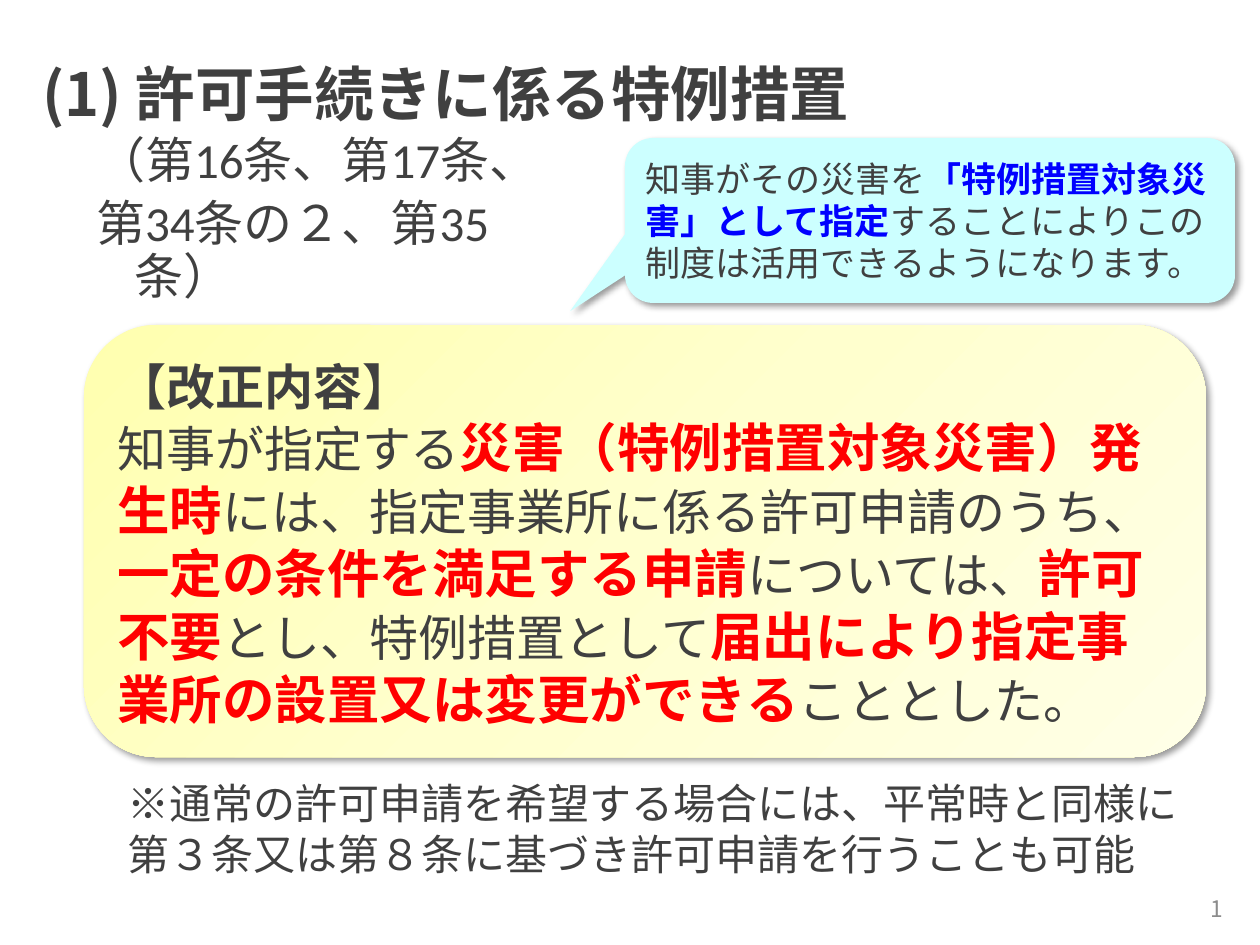
from lxml.etree import SubElement
from pptx import Presentation
from pptx.dml.color import RGBColor
from pptx.enum.shapes import MSO_SHAPE as Preset
from pptx.enum.text import MSO_ANCHOR as Anchor, PP_ALIGN as Align
from pptx.oxml.ns import qn
from pptx.util import Emu, Pt

PX = 914400 / 126
GOTHIC = "Noto Sans CJK JP"
GREY, RED, BLUE = "404040", "FF0000", "0000FF"


def px(length):
    return Emu(round(length * PX))


def rgb(value):
    return RGBColor.from_string(value)


def add_color(parent, value):
    return SubElement(parent, qn("a:srgbClr"), val=value)


class SlideBuilder:
    def __init__(self, slide, font=GOTHIC, color=GREY):
        self.slide, self.font, self.color = slide, font, color

    def fill_text(self, shape, paragraphs, size, anchor=Anchor.TOP, hanging=0, latin=None,
                  run_format=None, **paragraph_format):
        """Fill a shape; each paragraph is a list of (text, run format) pairs."""
        frame = shape.text_frame
        frame.word_wrap = True
        frame.vertical_anchor = anchor
        for index, runs in enumerate(paragraphs):
            paragraph = frame.add_paragraph() if index else frame.paragraphs[0]
            layout = {"alignment": Align.LEFT, **paragraph_format}
            if index == 0:
                layout.pop("space_before", None)
            for name, value in layout.items():
                setattr(paragraph, name, value)
            if hanging:
                properties = paragraph._p.get_or_add_pPr()
                properties.set("marL", str(px(hanging)))
                properties.set("indent", str(-px(hanging)))
            for text, changes in runs:
                self.add_run(paragraph, text, {"size": size, "name": latin or self.font,
                                               **(run_format or {}), **changes})

    def add_run(self, paragraph, text, changes):
        run = paragraph.add_run()
        run.text = text
        values = {"bold": False, **changes}
        run.font.color.rgb = rgb(values.pop("color", self.color))
        values["size"] = Pt(values["size"])
        for name, value in values.items():
            setattr(run.font, name, value)
        SubElement(run._r.get_or_add_rPr(), qn("a:ea"), typeface=self.font)

    def text(self, box, paragraphs, size, **options):
        self.fill_text(self.slide.shapes.add_textbox(*map(px, box)), paragraphs, size,
                       **options)

    def panel(self, preset, box, fills, paragraphs, size, adjustments=(), **options):
        """Draw a shadowed shape with one solid colour or evenly spaced gradient colours."""
        shape = self.slide.shapes.add_shape(preset, *map(px, box))
        for index, value in enumerate(adjustments):
            shape.adjustments[index] = value
        shape.line.fill.background()
        if len(fills) == 1:
            shape.fill.solid()
            shape.fill.fore_color.rgb = rgb(fills[0])
        else:
            self.set_gradient(shape, fills)
        self.add_shadow(shape)
        self.fill_text(shape, paragraphs, size, **options)

    def set_gradient(self, shape, colors):
        shape.fill.gradient()
        shape.fill.gradient_angle = 315
        stops = shape._element.spPr.find(".//" + qn("a:gsLst"))
        for stop in list(stops):
            stops.remove(stop)
        for index, color in enumerate(colors):
            position = 100000 * index // (len(colors) - 1)
            add_color(SubElement(stops, qn("a:gs"), pos=str(position)), color)

    def add_shadow(self, shape):
        shape.shadow.inherit = False
        effects = shape._element.spPr.find(qn("a:effectLst"))
        shadow = SubElement(effects, qn("a:outerShdw"), blurRad=str(Pt(4)), dist=str(Pt(3)),
                            dir=str(45 * 60000), algn="tl", rotWithShape="0")
        SubElement(add_color(shadow, "000000"), qn("a:alpha"), val="40000")


def main():
    deck = Presentation()
    deck.slide_width, deck.slide_height = px(1260), px(945)
    page = SlideBuilder(deck.slides.add_slide(deck.slide_layouts[6]))
    strong = {"size": 30, "color": RED, "bold": True}

    page.text((951, 883, 284, 50), [[("1", {"color": "8C8C8C"})]], 13,
              anchor=Anchor.MIDDLE, alignment=Align.RIGHT)
    page.text((30, 45, 896, 77), [[("(1) 許可手続きに係る特例措置", {})]], 34,
              hanging=38, run_format={"bold": True}, line_spacing=Pt(44))

    amendment = [
        [("【改正内容】", {"bold": True})],
        [("知事が指定する", {}),
         ("災害（特例措置対象災害）発生時", strong),
         ("には、指定事業所に係る許可申請のうち、", {}),
         ("一定の条件を満足する申請", strong),
         ("については、", {}),
         ("許可不要", strong),
         ("とし、特例措置として", {}),
         ("届出により指定事業所の設置又は変更ができる", strong),
         ("こととした。", {})],
    ]
    page.panel(Preset.ROUNDED_RECTANGLE, (84, 325, 1122, 432),
               ["FFFFAF", "FFFFCE", "FFFFE7"], amendment, 28, line_spacing=Pt(36))

    page.text((115, 771, 1091, 115),
              [[("※通常の許可申請を希望する場合には、平常時と同様に"
                 "第３条又は第８条に基づき許可申請を行うことも可能", {})]],
              24, line_spacing=Pt(29))
    page.text((84, 130, 490, 163),
              [[("（第16条、第17条、", {})], [("第34条の２、第35条）", {})]], 28,
              hanging=38, latin="Calibri", line_spacing=Pt(30), space_before=Pt(6))

    designation = [[("知事がその災害を", {}),
                    ("「特例措置対象災害」として指定", {"color": BLUE, "bold": True}),
                    ("することによりこの制度は活用できるようになります。", {})]]
    page.panel(Preset.ROUNDED_RECTANGULAR_CALLOUT, (625, 138, 610, 165), ["CCFFFF"],
               designation, 20, adjustments=(-0.59, 0.55, 0.17),
               anchor=Anchor.MIDDLE, line_spacing=Pt(24))

    deck.save("out.pptx")


if __name__ == "__main__":
    main()
